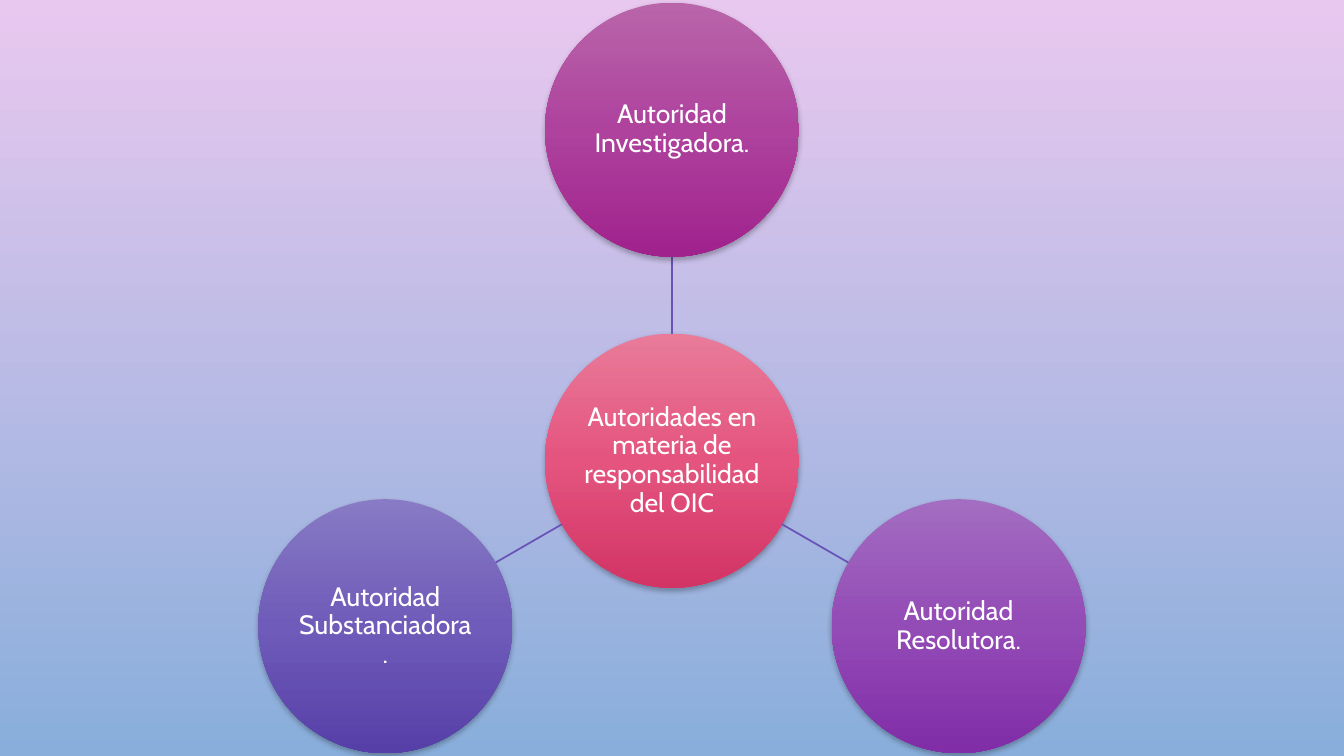
from copy import deepcopy
from math import cos, radians, sin

from lxml import etree
from pptx import Presentation
from pptx import util as u
from pptx.dml.color import RGBColor
from pptx.enum import shapes, text
from pptx.oxml.ns import qn

WIDTH, HEIGHT = 1344, 756
RADIUS, SPOKE = 127, 331
COLORS = {
    "text": "FFFFFF",
    "spoke": "6953B7",
    "shadow": "000000",
    "sky": ["E9C8EF", "89AEDB"],
    "hub": ["E97B99", "E4547F", "D23465"],
    "investigadora": ["B965AA", "AE429D", "A0228D"],
    "resolutora": ["A36DC1", "934BB6", "802DA7"],
    "substanciadora": ["887AC4", "6F5BB9", "563FA7"],
}
HUB_LABEL = "Autoridades en materia de responsabilidad del OIC"
AUTHORITIES = [  # label, colour key, direction in degrees clockwise from east
    ("Autoridad Investigadora.", "investigadora", -90),
    ("Autoridad Resolutora.", "resolutora", 30),
    ("Autoridad Substanciadora.", "substanciadora", 150),
]


def px(n):
    return u.Emu(round(n * 914400 / 100.8))


def fill_gradient(fill, element, colors):
    """Fill from top to bottom with evenly spaced colours."""
    fill.gradient()
    fill.gradient_angle = 270
    stop_list = element.find(".//" + qn("a:gsLst"))
    while len(stop_list) < len(colors):
        stop_list.append(deepcopy(stop_list[0]))
    for i, (stop, color) in enumerate(zip(fill.gradient_stops, colors)):
        stop.color.rgb = RGBColor.from_string(color)
        stop.position = i / (len(colors) - 1)


def add_shadow(shape):
    shape.shadow.inherit = False
    effects = shape._element.spPr.find(qn("a:effectLst"))
    shadow = etree.SubElement(
        effects, qn("a:outerShdw"), blurRad=str(u.Pt(4)), dist=str(u.Pt(2)),
        dir="5400000", algn="ctr", rotWithShape="0")
    color = etree.SubElement(shadow, qn("a:srgbClr"), val=COLORS["shadow"])
    etree.SubElement(color, qn("a:alpha"), val="28000")


def add_circle(slide, x, y, label, colors):
    circle = slide.shapes.add_shape(
        shapes.MSO_SHAPE.OVAL, px(x - RADIUS), px(y - RADIUS),
        px(2 * RADIUS), px(2 * RADIUS))
    fill_gradient(circle.fill, circle._element, colors)
    circle.line.fill.background()
    add_shadow(circle)

    frame = circle.text_frame
    frame.word_wrap = True
    frame.vertical_anchor = text.MSO_ANCHOR.MIDDLE
    frame.margin_left = frame.margin_right = px(1)
    frame.margin_top = frame.margin_bottom = px(1)
    frame.text = label
    paragraph = frame.paragraphs[0]
    paragraph.alignment = text.PP_ALIGN.CENTER
    paragraph.line_spacing = 0.9
    paragraph.font.name = "Cabin"
    paragraph.font.size = u.Pt(19)
    paragraph.font.color.rgb = RGBColor.from_string(COLORS["text"])


def add_spoke(slide, x1, y1, x2, y2):
    spoke = slide.shapes.add_connector(
        shapes.MSO_CONNECTOR.STRAIGHT, px(x1), px(y1), px(x2), px(y2))
    spoke.line.color.rgb = RGBColor.from_string(COLORS["spoke"])
    spoke.line.width = u.Pt(1.25)
    etree.SubElement(spoke._element.spPr, qn("a:effectLst"))


def add_radial_diagram(slide, left, top, width, height):
    # The spokes at 30 degrees reach half a spoke below the hub
    hub_x = left + width / 2
    hub_y = top + (height + SPOKE / 2) / 2
    add_circle(slide, hub_x, hub_y, HUB_LABEL, COLORS["hub"])

    # Spokes and outer circles
    for label, key, angle in AUTHORITIES:
        dx, dy = cos(radians(angle)), sin(radians(angle))
        start, end = RADIUS, SPOKE - RADIUS
        add_spoke(slide, hub_x + start * dx, hub_y + start * dy,
                  hub_x + end * dx, hub_y + end * dy)
        add_circle(slide, hub_x + SPOKE * dx, hub_y + SPOKE * dy,
                   label, COLORS[key])


def main():
    deck = Presentation()
    deck.slide_width, deck.slide_height = px(WIDTH), px(HEIGHT)
    slide = deck.slides.add_slide(deck.slide_layouts[6])
    fill_gradient(slide.background.fill, slide._element, COLORS["sky"])
    add_radial_diagram(slide, 0, 0, WIDTH, HEIGHT)
    deck.save("out.pptx")


if __name__ == "__main__":
    main()
